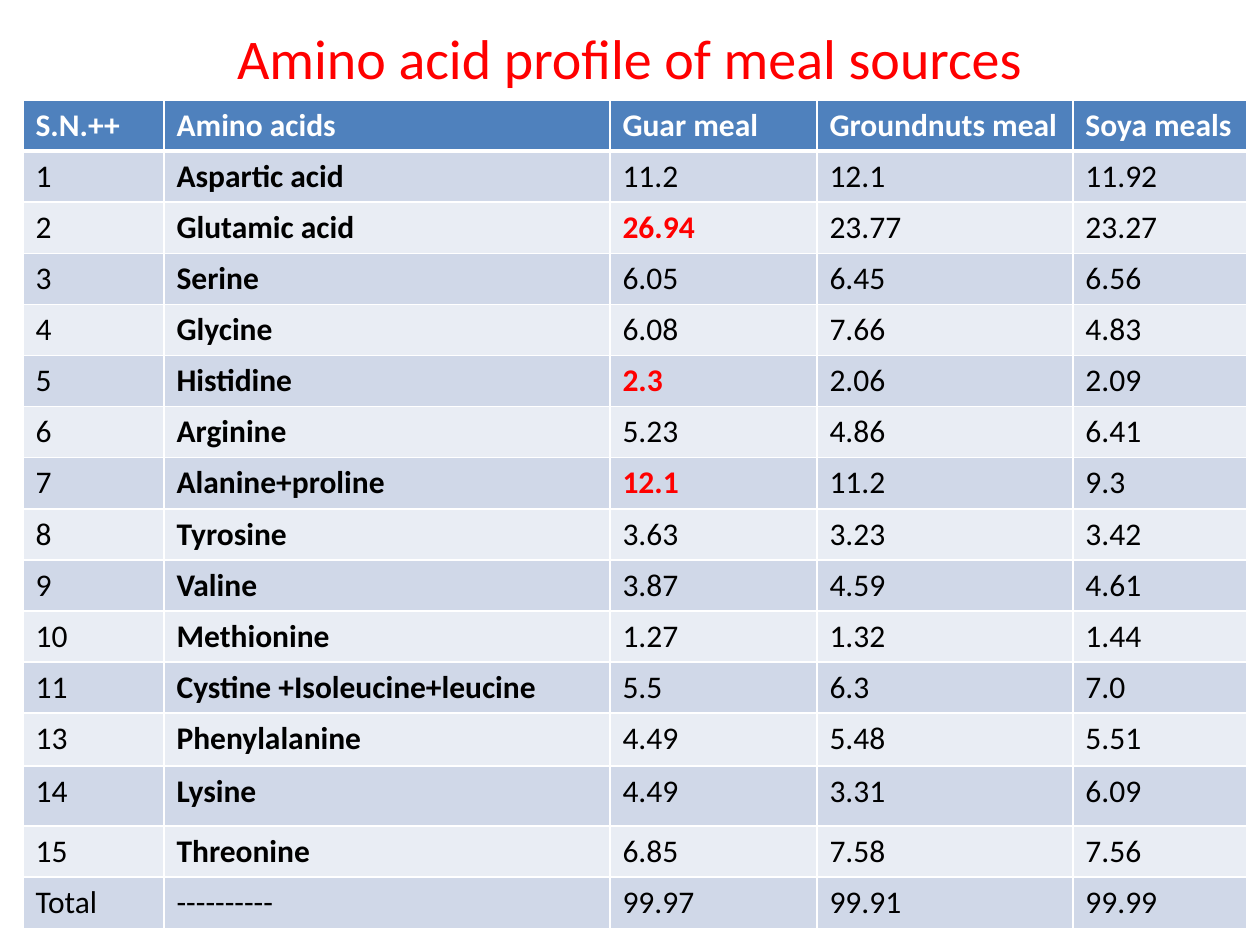
from typing import NamedTuple

import lxml.etree
import pptx
import pptx.dml.color
import pptx.enum.text
import pptx.oxml.ns
import pptx.util

EMU_PER_PX = 914400 / 126
FONT = "Calibri"
RED, BLACK, WHITE = "FF0000", "000000", "FFFFFF"
HEADER_FILL = "4F81BD"
BAND_FILLS = ("D0D8E8", "E9EDF4")

COLUMN_WIDTHS = (141, 446, 207, 256, 174)
ROW_HEIGHT = 51
TALL_ROWS = {"13": 53, "14": 60}
HEADINGS = ("S.N.++", "Amino acids", "Guar meal", "Groundnuts meal", "Soya meals")


class AminoAcid(NamedTuple):
    number: str
    name: str
    guar: str
    groundnut: str
    soya: str


PROFILE = (
    AminoAcid("1", "Aspartic acid", "11.2", "12.1", "11.92"),
    AminoAcid("2", "Glutamic acid", "26.94", "23.77", "23.27"),
    AminoAcid("3", "Serine", "6.05", "6.45", "6.56"),
    AminoAcid("4", "Glycine", "6.08", "7.66", "4.83"),
    AminoAcid("5", "Histidine", "2.3", "2.06", "2.09"),
    AminoAcid("6", "Arginine", "5.23", "4.86", "6.41"),
    AminoAcid("7", "Alanine+proline", "12.1", "11.2", "9.3"),
    AminoAcid("8", "Tyrosine", "3.63", "3.23", "3.42"),
    AminoAcid("9", "Valine", "3.87", "4.59", "4.61"),
    AminoAcid("10", "Methionine", "1.27", "1.32", "1.44"),
    AminoAcid("11", "Cystine +Isoleucine+leucine", "5.5", "6.3", "7.0"),
    AminoAcid("13", "Phenylalanine", "4.49", "5.48", "5.51"),
    AminoAcid("14", "Lysine", "4.49", "3.31", "6.09"),
    AminoAcid("15", "Threonine", "6.85", "7.58", "7.56"),
    AminoAcid("Total", "----------", "99.97", "99.91", "99.99"),
)
HIGHLIGHTED_GUAR = {"2", "5", "7"}


def px(length: int) -> pptx.util.Emu:
    return pptx.util.Emu(round(length * EMU_PER_PX))


def rgb(color: str) -> pptx.dml.color.RGBColor:
    return pptx.dml.color.RGBColor.from_string(color)


def add_text(paragraph, text: str, size: int, color: str, bold: bool = False) -> None:
    run = paragraph.add_run()
    run.text = text
    run.font.name = FONT
    run.font.size = pptx.util.Pt(size)
    run.font.bold = bold
    run.font.color.rgb = rgb(color)


def add_borders(cell, top: int = 1, bottom: int = 1) -> None:
    """Draw white borders; widths are in points."""
    properties = cell._tc.get_or_add_tcPr()
    qn = pptx.oxml.ns.qn
    for tag, width in (("a:lnL", 1), ("a:lnR", 1), ("a:lnT", top), ("a:lnB", bottom)):
        line = lxml.etree.SubElement(properties, qn(tag), w=str(pptx.util.Pt(width)))
        fill = lxml.etree.SubElement(line, qn("a:solidFill"))
        lxml.etree.SubElement(fill, qn("a:srgbClr"), val=WHITE)


def fill_cell(cell, text: str, fill: str, color: str, bold: bool,
              top: int = 1, bottom: int = 1) -> None:
    add_borders(cell, top, bottom)
    cell.fill.solid()
    cell.fill.fore_color.rgb = rgb(fill)
    add_text(cell.text_frame.paragraphs[0], text, 18, color, bold)


def add_title(slide, text: str) -> None:
    title = slide.shapes.title
    title.left, title.top, title.width, title.height = px(63), px(-1), px(1134), px(116)
    frame = title.text_frame
    frame.auto_size = pptx.enum.text.MSO_AUTO_SIZE.NONE
    frame.vertical_anchor = pptx.enum.text.MSO_ANCHOR.MIDDLE
    paragraph = frame.paragraphs[0]
    paragraph.alignment = pptx.enum.text.PP_ALIGN.CENTER
    add_text(paragraph, text, 32, RED)


def add_profile_table(slide) -> None:
    heights = [ROW_HEIGHT] + [TALL_ROWS.get(acid.number, ROW_HEIGHT) for acid in PROFILE]
    table = slide.shapes.add_table(
        len(heights), len(COLUMN_WIDTHS), px(23), px(100),
        px(sum(COLUMN_WIDTHS)), px(sum(heights))).table
    for column, width in zip(table.columns, COLUMN_WIDTHS):
        column.width = px(width)
    for row, height in zip(table.rows, heights):
        row.height = px(height)

    # Header row
    for column, heading in enumerate(HEADINGS):
        fill_cell(table.cell(0, column), heading, HEADER_FILL, WHITE, True, bottom=3)

    # Banded body rows: bold names, notable guar values in red
    for row, acid in enumerate(PROFILE, start=1):
        for column, text in enumerate(acid):
            highlighted = column == 2 and acid.number in HIGHLIGHTED_GUAR
            named = column == 1 and acid.number != "Total"
            fill_cell(table.cell(row, column), text, BAND_FILLS[(row - 1) % 2],
                      RED if highlighted else BLACK, highlighted or named,
                      top=3 if row == 1 else 1)


def main() -> None:
    presentation = pptx.Presentation()
    presentation.slide_width, presentation.slide_height = px(1260), px(945)
    slide = presentation.slides.add_slide(presentation.slide_layouts[5])
    add_title(slide, "Amino acid profile of meal sources")
    add_profile_table(slide)
    presentation.save("out.pptx")


if __name__ == "__main__":
    main()
